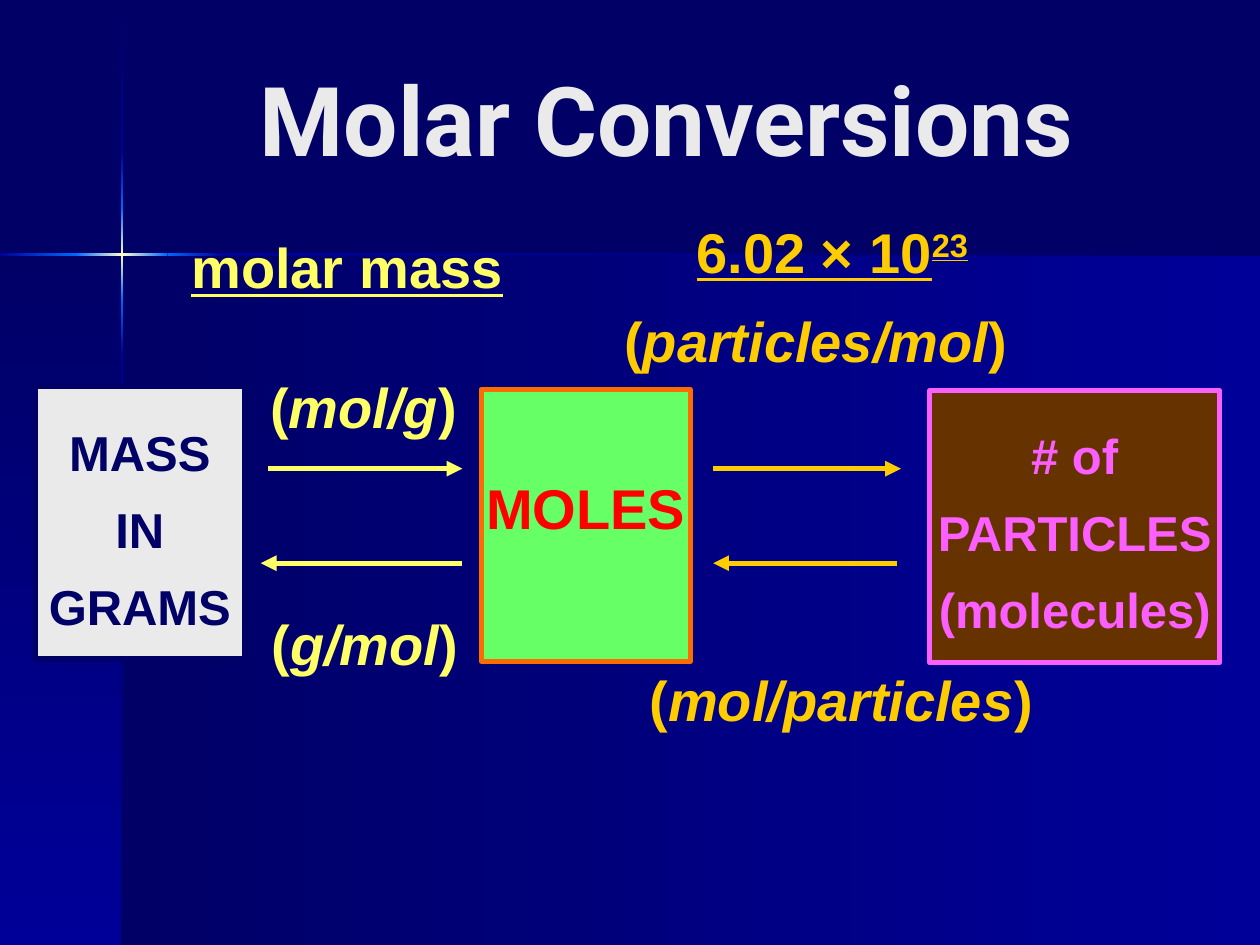
"""Build the Molar Conversions slide: mass, moles and particles joined by arrows."""
from itertools import pairwise

from lxml import etree
from pptx import Presentation
from pptx import util as u
from pptx.dml.color import RGBColor
from pptx.enum import shapes, text
from pptx.oxml.ns import qn

THEME = {
    "night": "000066", "royal": "000099", "glow": "0066FF", "spark": "FFFFCC",
    "pale": "EAEAEA", "yellow": "FFFF66", "gold": "FFCC00", "green": "66FF66",
    "orange": "FC6C00", "red": "FF0000", "brown": "663300", "pink": "FB5FFF",
    "font": "Arial", "title_font": "Roboto",
    "title": 55, "label": 32, "box": 28, "gap": 10.4, "line": 3,
}

presentation = Presentation()
presentation.slide_width, presentation.slide_height = u.Inches(10), u.Inches(7.5)
column = presentation.slide_width / 10
row = presentation.slide_height / 7.5
slide = presentation.slides.add_slide(presentation.slide_layouts[5])
slide.background.fill.solid()
slide.background.fill.fore_color.rgb = RGBColor.from_string(THEME["night"])


def grid(left, top, width, height):
    return [round(value) for value in (left * column, top * row, width * column, height * row)]


def write(shape, lines, size, color, top_margin, font="font"):
    frame = shape.text_frame
    frame.word_wrap = True
    frame.auto_size = text.MSO_AUTO_SIZE.NONE
    frame.margin_left = frame.margin_right = frame.margin_bottom = u.Inches(0.01)
    frame.margin_top = u.Inches(top_margin)
    frame.vertical_anchor = text.MSO_ANCHOR.TOP
    for index, line in enumerate(lines):
        paragraph = frame.add_paragraph() if index else frame.paragraphs[0]
        paragraph.alignment = text.PP_ALIGN.CENTER
        paragraph.space_before = u.Pt(THEME["gap"] if index else 0)
        for words, style in line:
            run = paragraph.add_run()
            run.text = words
            run.font.name, run.font.size, run.font.bold = THEME[font], u.Pt(THEME[size]), True
            run.font.color.rgb = RGBColor.from_string(THEME[color])
            run.font.italic = "italic" in style
            run.font.underline = "underline" in style
            if "raised" in style:
                run.font._element.set("baseline", "30000")


cross_x, cross_y, beam = 0.97, 2.02, 0.02
across = [(0, "royal"), (0.6, "glow"), (cross_x, "spark"), (1.33, "glow"), (1.77, "royal"), (10, "night")]
down = [(0.01, "night"), (1.21, "royal"), (1.65, "glow"), (cross_y, "spark"),
        (2.38, "glow"), (2.82, "royal"), (7.5, "night")]
bands = [
    ((cross_x, cross_y, 10 - cross_x, 7.5 - cross_y), "night", "royal", 0),
    ((0, cross_y, cross_x, 7.5 - cross_y), "night", "royal", 270),
]
for (start, first), (end, last) in pairwise(down):
    bands.append(((cross_x - beam / 2, start, beam, end - start), first, last, 270))
for (start, first), (end, last) in pairwise(across):
    bands.append(((start, cross_y - beam / 2, end - start, beam), first, last, 0))
for place, first, last, angle in bands:
    band = slide.shapes.add_shape(shapes.MSO_SHAPE.RECTANGLE, *grid(*place))
    band.shadow.inherit = False
    band.line.fill.background()
    band.fill.gradient()
    band.fill.gradient_angle = angle
    for stop, color in zip(band.fill.gradient_stops, (first, last)):
        stop.color.rgb = RGBColor.from_string(THEME[color])

title = slide.shapes.title
band.element.addnext(title.element)
title.left, title.top, title.width, title.height = grid(0.91, 0.13, 8.76, 1.57)
write(title, [[("Molar Conversions", "")]], "title", "pale", 0.05, "title_font")
title.text_frame.vertical_anchor = text.MSO_ANCHOR.MIDDLE

boxes = [
    ((0.28, 3.07, 1.66, 2.16), ["MASS", "IN", "GRAMS"], "box", "night", "pale", "night", 0.28),
    ((3.82, 3.09, 1.66, 2.16), ["MOLES"], "label", "red", "green", "orange", 0.67),
    ((7.38, 3.1, 2.3, 2.16), ["# of", "PARTICLES", "(molecules)"], "box", "pink", "brown", "pink", 0.28),
]
for place, lines, size, color, fill, outline, top_margin in boxes:
    box = slide.shapes.add_shape(shapes.MSO_SHAPE.RECTANGLE, *grid(*place))
    box.shadow.inherit = False
    box.fill.solid()
    box.fill.fore_color.rgb = RGBColor.from_string(THEME[fill])
    box.line.color.rgb = RGBColor.from_string(THEME[outline])
    box.line.width = u.Pt(THEME["line"])
    write(box, [[(line, "")] for line in lines], size, color, top_margin)

arrows = [
    (2.13, 3.67, 3.72, "yellow", "a:tailEnd"),
    (5.66, 7.15, 3.72, "gold", "a:tailEnd"),
    (2.07, 3.67, 4.47, "yellow", "a:headEnd"),
    (5.66, 7.12, 4.47, "gold", "a:headEnd"),
]
for start, end, height, color, tip in arrows:
    arrow = slide.shapes.add_connector(
        shapes.MSO_CONNECTOR.STRAIGHT, *grid(start, height, end, height))
    arrow.line.color.rgb = RGBColor.from_string(THEME[color])
    arrow.line.width = u.Pt(THEME["line"])
    properties = arrow.element.spPr
    etree.SubElement(properties.find(qn("a:ln")), qn(tip), type="triangle")
    etree.SubElement(properties, qn("a:effectLst"))

labels = [
    ((1.37, 1.8, 2.77, 0.6), [("molar mass", "underline")], "yellow"),
    ((5.44, 1.68, 2.33, 0.61), [("6.02 × 10", "underline"), ("23", "underline raised")], "gold"),
]
units = [
    ((2.06, 2.91, 1.65, 0.74), "mol/g", "yellow"),
    ((2.07, 4.79, 1.65, 0.74), "g/mol", "yellow"),
    ((4.65, 2.38, 3.65, 0.74), "particles/mol", "gold"),
    ((4.85, 5.23, 3.65, 0.74), "mol/particles", "gold"),
]
labels += [(place, [("(", ""), (unit, "italic"), (")", "")], color) for place, unit, color in units]
for place, pieces, color in labels:
    label = slide.shapes.add_textbox(*grid(*place))
    write(label, [pieces], "label", color, 0.05)

presentation.save("out.pptx")
